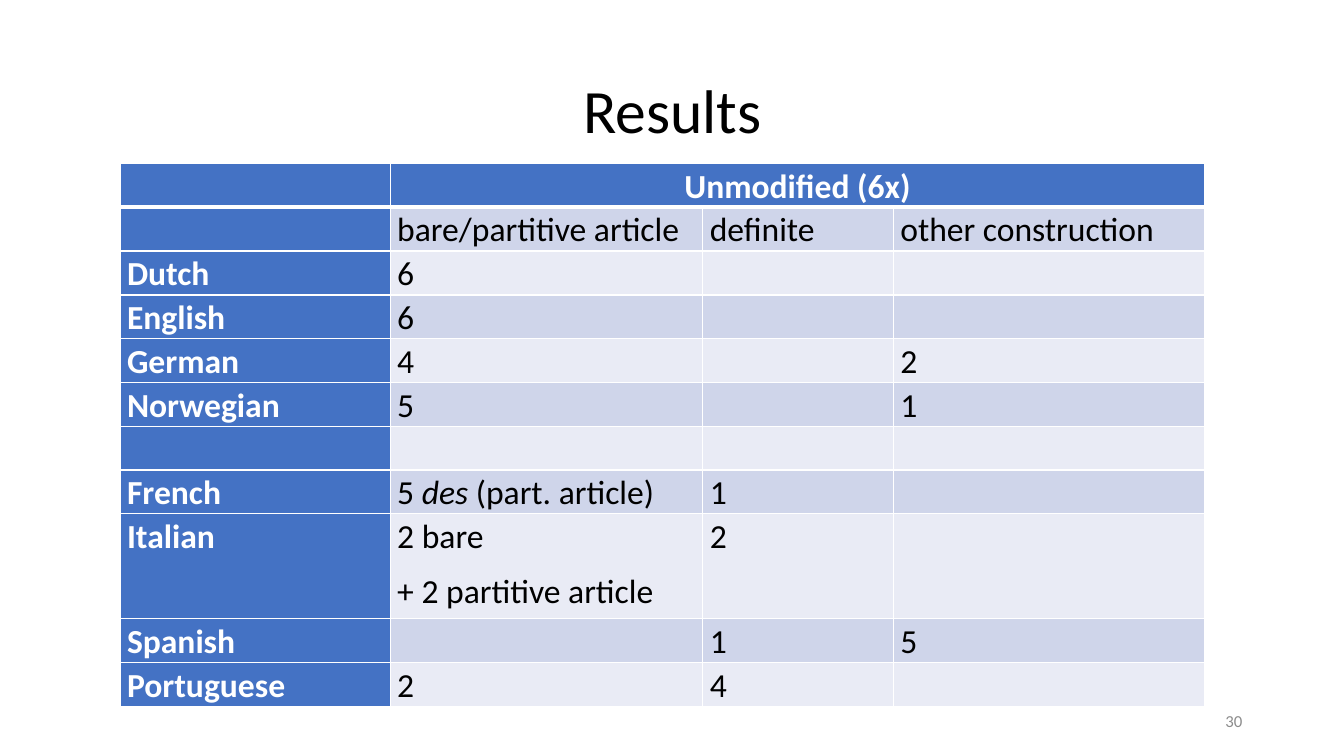
from dataclasses import dataclass

from lxml import etree
from pptx import Presentation
from pptx import util as u
from pptx.dml.color import RGBColor
from pptx.enum import text
from pptx.oxml.ns import qn


@dataclass(frozen=True)
class Theme:
    font: str = "Calibri"
    ink: str = "000000"
    paper: str = "FFFFFF"
    accent: str = "4472C4"
    bands: tuple = ("E9EBF5", "CFD5EA")
    muted: str = "8C8C8C"
    title_size: int = 44
    table_size: int = 24
    number_size: int = 12


THEME = Theme()
SLIDE_SIZE = (13.33, 7.5)
TITLE_BOX = (0.92, 0.4, 11.5, 1.45)
TABLE_BOX = (1.19, 1.62, 10.76, 5.34)
NUMBER_BOX = (9.42, 6.95, 3, 0.4)

COLUMN_WIDTHS = (2.68, 3.1, 1.89, 3.09)
ROW_HEIGHT, TALL_ROW_HEIGHT = 0.43, 1.04

# A cell is a list of paragraphs split at "\n"; "*" switches italics
RESULTS = [
    ("", "Unmodified (6x)", "", ""),
    ("", "bare/partitive article", "definite", "other construction"),
    ("Dutch", "6", "", ""),
    ("English", "6", "", ""),
    ("German", "4", "", "2"),
    ("Norwegian", "5", "", "1"),
    ("", "", "", ""),
    ("French", "5 *des* (part. article)", "1", ""),
    ("Italian", "2 bare\n+ 2 partitive article", "2", ""),
    ("Spanish", "", "1", "5"),
    ("Portuguese", "2", "4", ""),
]


def apply(target, **formats):
    for name, value in formats.items():
        setattr(target, name, value)


def write(paragraph, words, size, color, bold=False):
    for index, part in enumerate(words.split("*")):
        run = paragraph.add_run()
        run.text = part
        apply(run.font, name=THEME.font, size=u.Pt(size), bold=bold,
              italic=index % 2 == 1)
        run.font.color.rgb = RGBColor.from_string(color)


def add_borders(cell, widths):
    properties = cell._tc.get_or_add_tcPr()
    for position, (side, width) in enumerate(widths.items()):
        line = etree.Element(qn(f"a:ln{side}"), w=str(u.Pt(width)))
        fill = etree.SubElement(line, qn("a:solidFill"))
        etree.SubElement(fill, qn("a:srgbClr"), val=THEME.paper)
        properties.insert(position, line)


def add_title(slide, box, words):
    title = slide.shapes.title
    apply(title, **dict(zip(("left", "top", "width", "height"), map(u.Inches, box))))
    apply(title.text_frame, vertical_anchor=text.MSO_ANCHOR.MIDDLE, word_wrap=True)
    heading = title.text_frame.paragraphs[0]
    apply(heading, alignment=text.PP_ALIGN.CENTER, line_spacing=0.9)
    write(heading, words, THEME.title_size, THEME.ink)


def fill_cell(cell, words, row, column):
    is_header = row == 0 or column == 0
    color = THEME.accent if is_header else THEME.bands[row % 2]
    cell.fill.solid()
    cell.fill.fore_color.rgb = RGBColor.from_string(color)
    add_borders(cell, {"L": 1, "R": 1, "T": 3 if row == 1 else 1,
                       "B": 3 if row == 0 else 1})
    if not words:
        return
    apply(cell, margin_left=u.Inches(0.07), margin_right=u.Inches(0.07),
          margin_top=0, margin_bottom=0)
    frame = cell.text_frame
    for index, line in enumerate(words.split("\n")):
        paragraph = frame.add_paragraph() if index else frame.paragraphs[0]
        apply(paragraph, line_spacing=1.07, space_after=u.Pt(8),
              alignment=text.PP_ALIGN.LEFT if row else text.PP_ALIGN.CENTER)
        write(paragraph, line, THEME.table_size,
              THEME.paper if is_header else THEME.ink, bold=is_header)


def add_results(slide, box, results):
    table = slide.shapes.add_table(len(results), len(COLUMN_WIDTHS),
                                   *map(u.Inches, box)).table
    table.first_col = True
    for column, width in zip(table.columns, COLUMN_WIDTHS):
        column.width = u.Inches(width)
    for row, values in enumerate(results):
        is_tall = any("\n" in words for words in values)
        table.rows[row].height = u.Inches(TALL_ROW_HEIGHT if is_tall else ROW_HEIGHT)
        for column, words in enumerate(values):
            fill_cell(table.cell(row, column), words, row, column)
    # The group heading spans all result columns
    table.cell(0, 1).merge(table.cell(0, len(COLUMN_WIDTHS) - 1))


def add_number(slide, box, number):
    frame = slide.shapes.add_textbox(*map(u.Inches, box)).text_frame
    apply(frame, word_wrap=True, vertical_anchor=text.MSO_ANCHOR.MIDDLE)
    frame.paragraphs[0].alignment = text.PP_ALIGN.RIGHT
    write(frame.paragraphs[0], number, THEME.number_size, THEME.muted)


def main():
    deck = Presentation()
    deck.slide_width, deck.slide_height = map(u.Inches, SLIDE_SIZE)
    slide = deck.slides.add_slide(deck.slide_layouts.get_by_name("Title Only"))
    add_title(slide, TITLE_BOX, "Results")
    add_results(slide, TABLE_BOX, RESULTS)
    add_number(slide, NUMBER_BOX, "30")
    deck.save("out.pptx")


if __name__ == "__main__":
    main()
